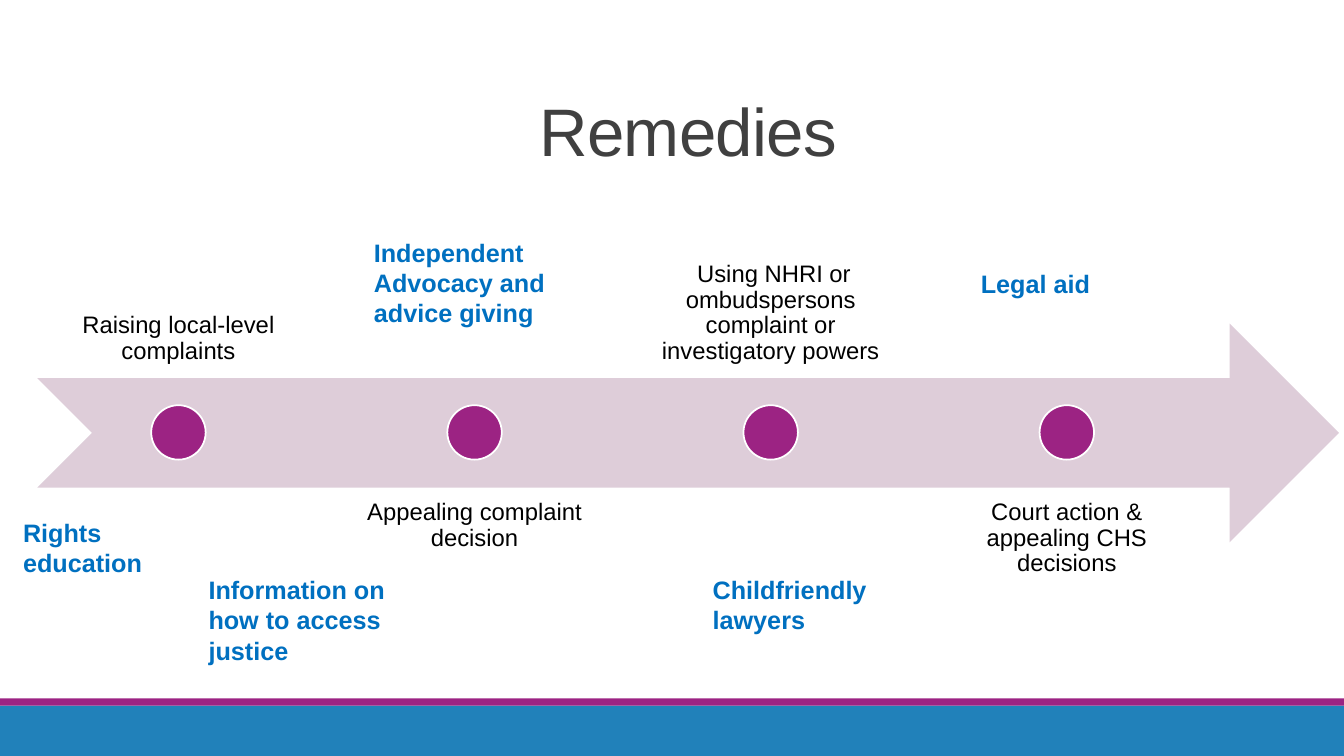
from dataclasses import dataclass

from pptx import Presentation
from pptx.dml.color import RGBColor
from pptx.enum import shapes, text
from pptx.util import Inches, Pt


@dataclass(frozen=True)
class Theme:
    font: str = "Arial"
    blue: str = "2181BA"
    purple: str = "9C2383"
    arrow: str = "DECDD9"
    white: str = "FFFFFF"
    title: str = "404040"
    step: str = "000000"
    support: str = "0070C0"
    title_size: float = 48
    step_size: float = 17
    support_size: float = 18


theme = Theme()
prs = Presentation()
prs.slide_width, prs.slide_height = Inches(13.33), Inches(7.5)
s = prs.slides.add_slide(prs.slide_layouts[6])


def add_filled(kind, box, color):
    sp = s.shapes.add_shape(kind, *map(Inches, box))
    sp.shadow.inherit = False
    sp.fill.solid()
    sp.fill.fore_color.rgb = RGBColor.from_string(color)
    sp.line.fill.background()
    return sp


def add_label(box, words, size, color, bold=False, align=text.PP_ALIGN.LEFT,
              anchor=text.MSO_ANCHOR.TOP, spacing=1.0, inset=None):
    """Add a wrapped one-paragraph text box and return its run."""
    tf = s.shapes.add_textbox(*map(Inches, box)).text_frame
    tf.word_wrap = True
    tf.vertical_anchor = anchor
    if inset is not None:
        tf.margin_left = tf.margin_right = Inches(inset)
        tf.margin_top = tf.margin_bottom = Inches(inset)
    p = tf.paragraphs[0]
    p.text = words
    p.alignment = align
    p.line_spacing = spacing
    r = p.runs[0]
    r.font.name = theme.font
    r.font.size = Pt(size)
    r.font.bold = bold
    r.font.color.rgb = RGBColor.from_string(color)
    return r


# Footer bands and title
add_filled(shapes.MSO_SHAPE.RECTANGLE, (0, 7, 13.33, 0.5), theme.blue)
add_filled(shapes.MSO_SHAPE.RECTANGLE, (0, 6.93, 13.33, 0.07), theme.purple)
title = add_label((2.16, 0.15, 9.33, 1.59), "Remedies", theme.title_size, theme.title,
                  align=text.PP_ALIGN.CENTER, anchor=text.MSO_ANCHOR.BOTTOM, spacing=0.85)
title.font._element.set("spc", "-50")

# Timeline: steps alternate above and below the arrow
add_filled(shapes.MSO_SHAPE.NOTCHED_RIGHT_ARROW, (0.37, 3.21, 12.91, 2.17), theme.arrow)
steps = [
    "Raising local-level complaints",
    "Appealing complaint decision",
    " Using NHRI or ombudspersons complaint or investigatory powers",
    "Court action & appealing CHS decisions",
]
step_left, step_pitch, step_width, dot_size = 0.37, 2.937, 2.8, 0.54
for i, words in enumerate(steps):
    left = step_left + i * step_pitch
    above = i % 2 == 0
    add_label((left, 1.58 if above else 4.83, step_width, 2.17), words,
              theme.step_size, theme.step, align=text.PP_ALIGN.CENTER,
              anchor=text.MSO_ANCHOR.BOTTOM if above else text.MSO_ANCHOR.TOP,
              spacing=0.9, inset=0.13)
    dot = add_filled(shapes.MSO_SHAPE.OVAL,
                     (left + (step_width - dot_size) / 2, 4.02, dot_size, dot_size),
                     theme.purple)
    dot.line.color.rgb = RGBColor.from_string(theme.white)
    dot.line.width = Pt(1.25)

# Supports around the timeline
supports = [
    ((0.13, 5.08, 1.82, 0.71), "Rights education"),
    ((3.61, 2.3, 1.98, 1.01), "Independent Advocacy and advice giving"),
    ((6.97, 5.65, 1.86, 0.71), "Childfriendly lawyers"),
    ((9.63, 2.61, 1.86, 0.4), "Legal aid"),
    ((1.97, 5.65, 2.03, 1.01), "Information on how to access justice"),
]
for box, words in supports:
    add_label(box, words, theme.support_size, theme.support, bold=True)

prs.save("out.pptx")
